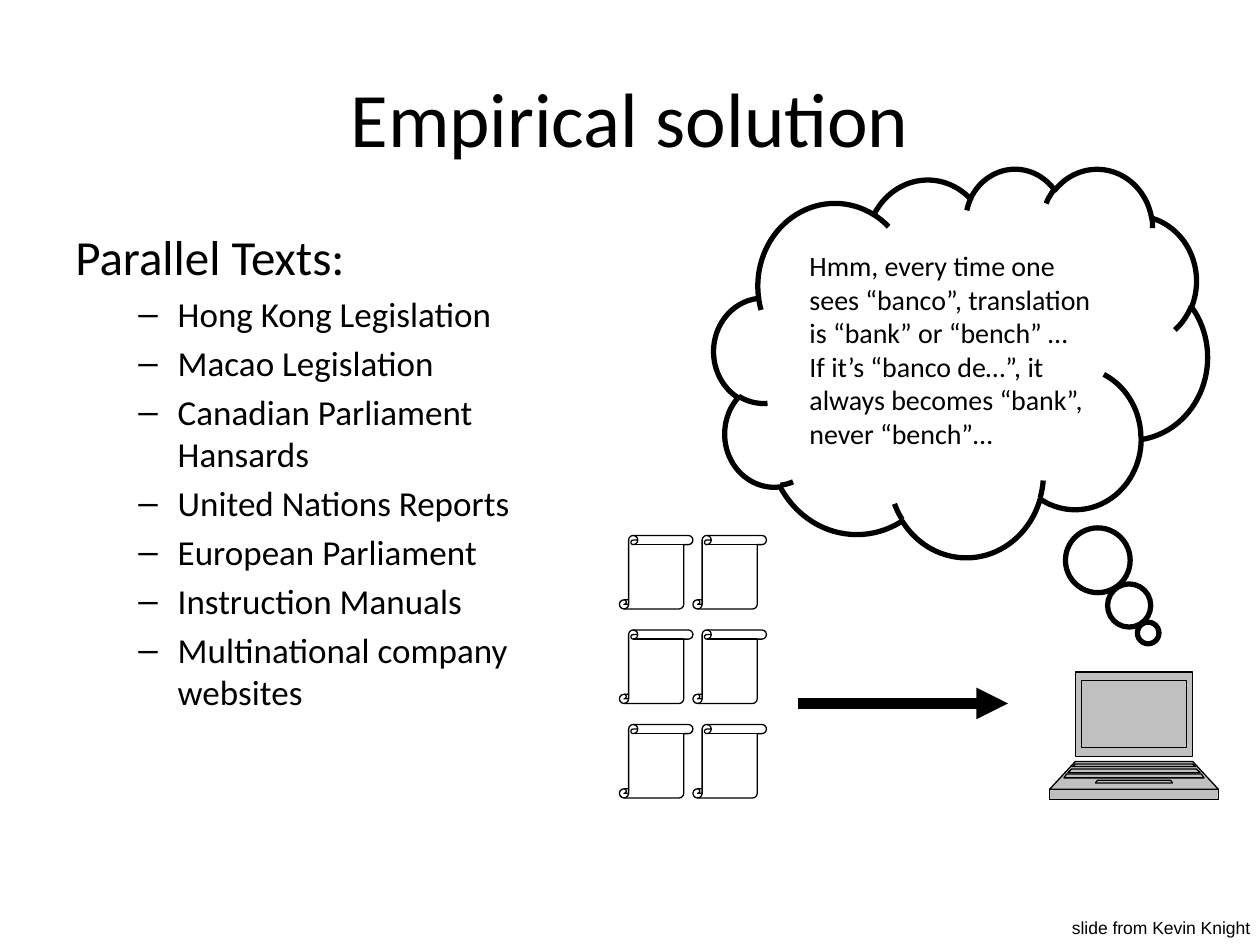
from dataclasses import dataclass

from lxml import etree
from pptx import Presentation
from pptx.dml.color import RGBColor
from pptx.enum.shapes import MSO_CONNECTOR, MSO_SHAPE
from pptx.enum.text import MSO_ANCHOR, MSO_AUTO_SIZE, PP_ALIGN
from pptx.oxml.ns import qn
from pptx.util import Pt

CLOUD = MSO_SHAPE.CLOUD_CALLOUT
SCROLL = MSO_SHAPE.VERTICAL_SCROLL
STRAIGHT = MSO_CONNECTOR.STRAIGHT
MIDDLE, TOP = MSO_ANCHOR.MIDDLE, MSO_ANCHOR.TOP
LEFT, CENTER, RIGHT = PP_ALIGN.LEFT, PP_ALIGN.CENTER, PP_ALIGN.RIGHT
GROW, FIXED = MSO_AUTO_SIZE.SHAPE_TO_FIT_TEXT, MSO_AUTO_SIZE.NONE


@dataclass(frozen=True)
class Theme:
    """Colours, fonts and type sizes of the slide."""
    ink: RGBColor = RGBColor(0, 0, 0)
    grey: RGBColor = RGBColor(0xC0, 0xC0, 0xC0)
    font: str = "Calibri"
    credit_font: str = "Arial"
    title: int = 44
    heading: int = 28
    item: int = 20
    thought: int = 16
    credit: int = 10
    thin: float = 0.75
    thick: int = 3
    arrow: int = 6


THEME = Theme()
SOURCES = [
    "Hong Kong Legislation",
    "Macao Legislation",
    "Canadian Parliament Hansards",
    "United Nations Reports",
    "European Parliament",
    "Instruction Manuals",
    "Multinational company websites",
]
THOUGHTS = [
    "Hmm, every time one sees “banco”, translation is “bank” or “bench” …",
    "If it’s “banco de…”, it",
    "always becomes “bank”,",
    "never “bench”…",
]
LAPTOP_PANELS = [
    (0, 48.2, 33.5, 33.5),
    (51.1, 67, 33.5, 48.2),
    (67, 72.7, 48.2, 48.2),
    (5, 43.2, 30, 30),
    (52.6, 54, 33.5, 35.3),
    (61.9, 63.4, 20.9, 22),
    (55.4, 57.6, 35.6, 37.8),
    (58.3, 60.5, 38.5, 40),
]


def to_points(box):
    """Convert a box of numbers to lengths in points."""
    return [Pt(value) for value in box]


def add_text(slide, box, lines, size, font=THEME.font, align=LEFT,
             anchor=TOP, wrap=True, fit=FIXED):
    """Add a text box with one paragraph for each line and return its frame."""
    frame = slide.shapes.add_textbox(*to_points(box)).text_frame
    frame.word_wrap = wrap
    frame.auto_size = fit
    frame.vertical_anchor = anchor
    for index, line in enumerate(lines):
        paragraph = frame.add_paragraph() if index else frame.paragraphs[0]
        paragraph.alignment = align
        run = paragraph.add_run()
        run.text = line
        run.font.name = font
        run.font.size = Pt(size)
        run.font.color.rgb = THEME.ink
    return frame


def add_source_list(slide, box):
    """Add the heading and its dashed list of text sources."""
    frame = add_text(slide, box, ["Parallel Texts:", *SOURCES], THEME.item)
    heading, *items = frame.paragraphs
    heading.runs[0].font.size = Pt(THEME.heading)
    indent_paragraph(heading, 27, 27, THEME.heading)
    for item in items:
        item.level = 1
        properties = indent_paragraph(item, 58.5, 22.5, THEME.item)
        etree.SubElement(properties, qn("a:buFont"), typeface="Arial")
        etree.SubElement(properties, qn("a:buChar"), char="–")


def indent_paragraph(paragraph, margin, hanging, size):
    """Set a hanging indent and a space of a fifth of the type size."""
    paragraph.space_before = Pt(size * 0.2)
    properties = paragraph._p.get_or_add_pPr()
    properties.set("marL", str(Pt(margin)))
    properties.set("indent", str(-Pt(hanging)))
    return properties


def outline_shape(shape, width):
    """Give a shape a black outline without fill or shadow."""
    shape.shadow.inherit = False
    shape.fill.background()
    shape.line.color.rgb = THEME.ink
    shape.line.width = Pt(width)


def add_thought_cloud(slide, box):
    """Add the thought cloud and the text inside it."""
    left, top, width, height = box
    text_box = (left + 47.5, top + 42.5, 177, 124)
    add_text(slide, text_box, THOUGHTS, THEME.thought, fit=GROW)
    cloud = slide.shapes.add_shape(CLOUD, *to_points(box))
    cloud.adjustments[0] = 0.38
    cloud.adjustments[1] = 0.697
    outline_shape(cloud, THEME.thick)


def add_scrolls(slide, box, rows=3, columns=2):
    """Fill the box with a grid of square scrolls."""
    left, top, width, height = box
    side = width / columns
    row_step = (height - side) / (rows - 1)
    for row in range(rows):
        for column in range(columns):
            place = (left + column * side, top + row * row_step, side, side)
            outline_shape(slide.shapes.add_shape(SCROLL, *to_points(place)), THEME.thin)


def add_laptop(slide, box):
    """Draw a laptop from panels that are symmetric about the box centre."""
    left, top, width, height = box
    center = left + width / 2
    builder = None
    for upper, lower, half_upper, half_lower in LAPTOP_PANELS:
        start, *corners = [
            (Pt(center + x), Pt(top + y))
            for x, y in ((-half_upper, upper), (half_upper, upper),
                         (half_lower, lower), (-half_lower, lower))
        ]
        if builder is None:
            builder = slide.shapes.build_freeform(*start)
        else:
            builder.move_to(*start)
        builder.add_line_segments(corners, close=True)
    laptop = builder.convert_to_shape()
    outline_shape(laptop, THEME.thin)
    laptop.fill.solid()
    laptop.fill.fore_color.rgb = THEME.grey
    separate_panels(laptop)


def separate_panels(shape):
    """Split the contours of a freeform so that overlaps stay filled."""
    outline = shape._element.xpath(".//a:path")[0]
    steps = list(outline)
    size = len(steps) // len(LAPTOP_PANELS)
    for first in range(size, len(steps), size):
        panel = etree.SubElement(outline.getparent(), outline.tag, dict(outline.attrib))
        panel.extend(steps[first:first + size])


def add_arrow(slide, box):
    """Add a thick arrow across the box."""
    left, top, width, height = box
    ends = to_points((left, top, left + width, top + height))
    arrow = slide.shapes.add_connector(STRAIGHT, *ends)
    arrow.line.color.rgb = THEME.ink
    arrow.line.width = Pt(THEME.arrow)
    properties = arrow._element.spPr
    etree.SubElement(properties.find(qn("a:ln")), qn("a:tailEnd"), type="triangle")
    etree.SubElement(properties, qn("a:effectLst"))


def main():
    """Build and save the slide."""
    presentation = Presentation()
    presentation.slide_width, presentation.slide_height = Pt(720), Pt(540)
    slide = presentation.slides.add_slide(presentation.slide_layouts[6])
    add_text(slide, (36, 21.6, 648, 90), ["Empirical solution"], THEME.title,
             align=CENTER, anchor=MIDDLE)
    add_thought_cloud(slide, (408, 96, 282, 222))
    add_scrolls(slide, (354, 306, 84, 150))
    add_laptop(slide, (600, 384, 96, 73))
    add_arrow(slide, (456, 402, 120, 0))
    add_text(slide, (603.4, 520.6, 118, 19.4), ["slide from Kevin Knight"],
             THEME.credit, font=THEME.credit_font, align=RIGHT, wrap=False, fit=GROW)
    add_source_list(slide, (36, 126, 308, 330))
    presentation.save("out.pptx")


if __name__ == "__main__":
    main()
